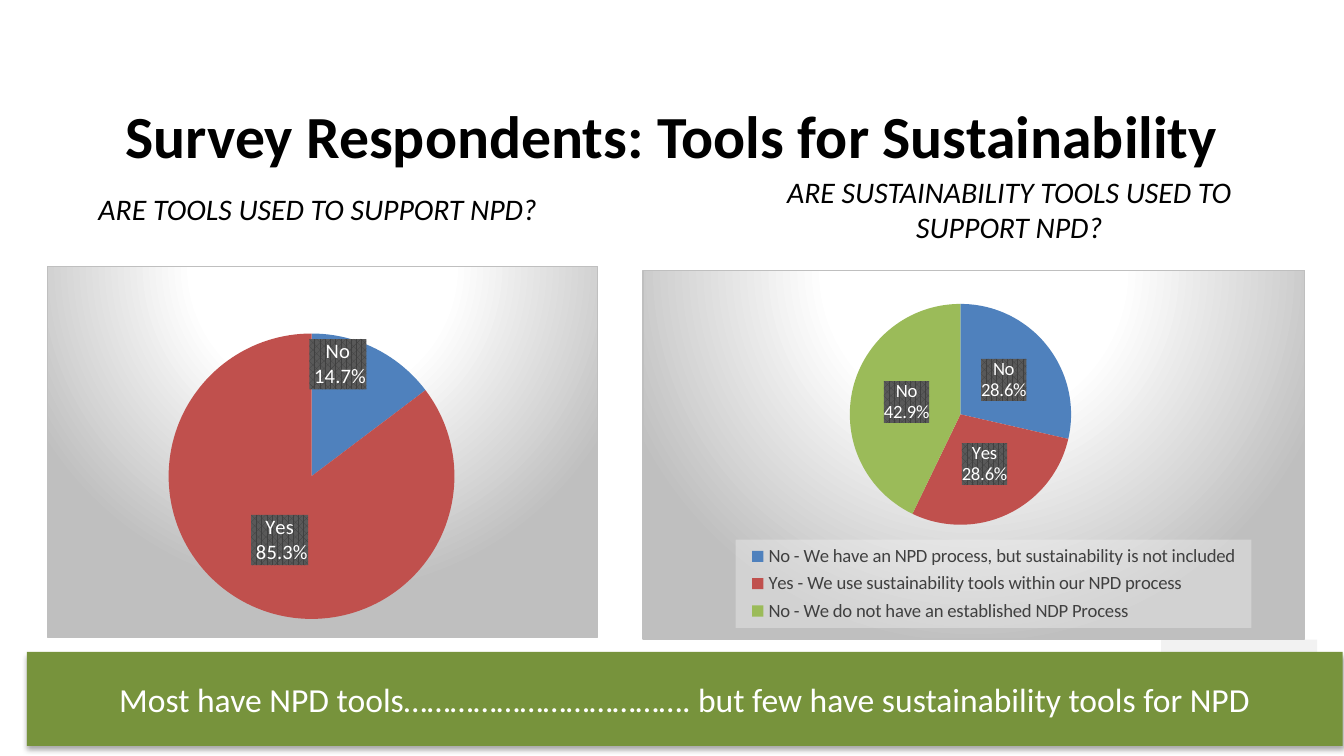
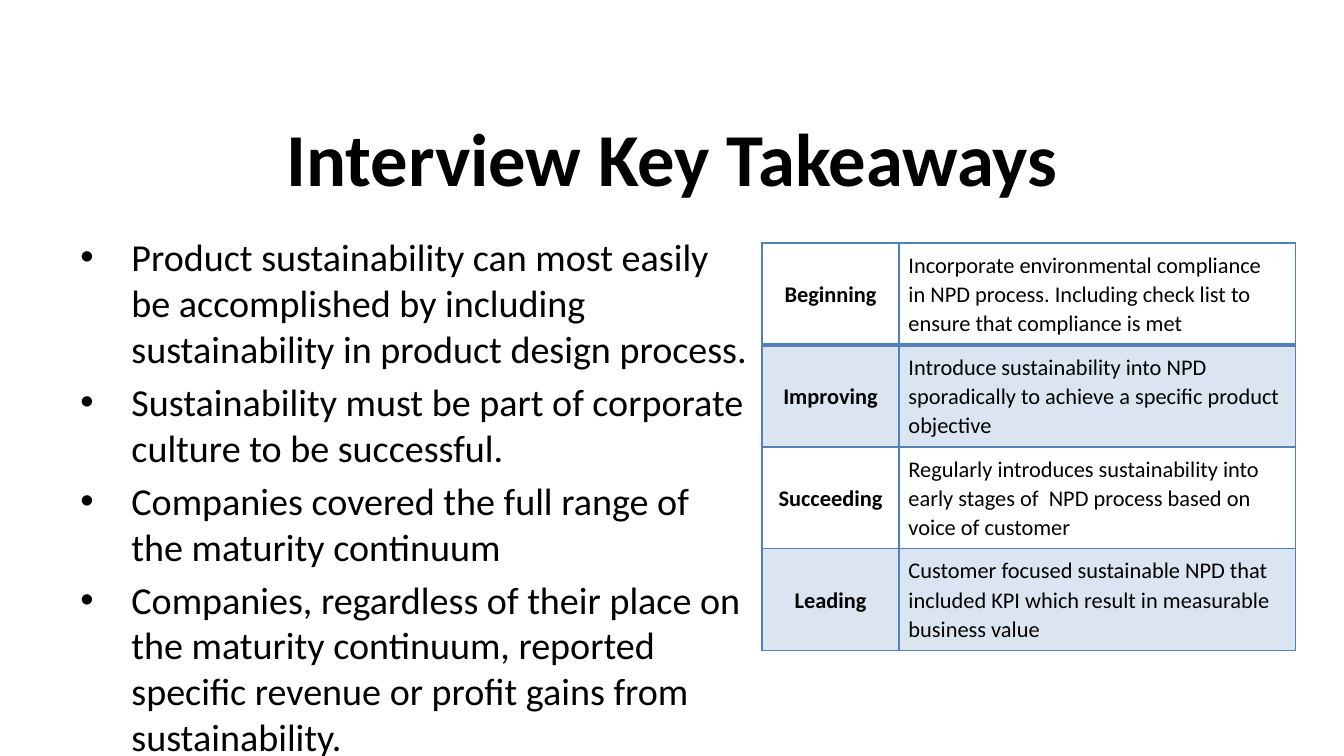
import dataclasses

import pptx
import pptx.chart.data
import pptx.dml.color
import pptx.enum.chart
import pptx.enum.shapes
import pptx.enum.text
import pptx.oxml
import pptx.oxml.ns
import pptx.util

Inches = pptx.util.Inches
ALIGN = pptx.enum.text.PP_ALIGN
MIDDLE = pptx.enum.text.MSO_ANCHOR.MIDDLE
NBSP = chr(160)


@dataclasses.dataclass(frozen=True)
class Theme:
    """Colours and type sizes shared by the slides."""
    font: str = "Calibri"
    text: str = "000000"
    white: str = "FFFFFF"
    pale: str = "F2F2F2"
    grey: str = "BFBFBF"
    legend: str = "404040"
    label: str = "595959"
    banner: str = "77933C"
    accent: str = "4F81BD"
    slices: tuple = ("4F81BD", "C0504D", "9BBB59")
    title_size: float = 40
    long_title_size: float = 32
    heading_size: float = 16
    banner_size: float = 18
    bullet_size: float = 20.4
    cell_size: float = 12
    chart_size: float = 10
    label_size: float = 11


T = Theme()


def rgb(value):
    """Return a colour from its hex value."""
    return pptx.dml.color.RGBColor.from_string(value)


def xml(text, *prefixes):
    """Return an element with its namespaces declared on the root tag."""
    tag, rest = text.split(">", 1)
    close = "/" if tag.endswith("/") else ""
    names = pptx.oxml.ns.nsdecls(*(prefixes or ("a",)))
    return pptx.oxml.parse_xml(f"{tag.rstrip('/')} {names}{close}>{rest}")


def style_font(font, size, color=T.text, **extra):
    """Apply the theme typeface with a size, a colour and further values."""
    values = {"name": T.font, "size": pptx.util.Pt(size), **extra}
    for name, value in values.items():
        setattr(font, name, value)
    font.color.rgb = rgb(color)


def write(tf, lines, size, color=T.text, align=ALIGN.CENTER, **extra):
    """Write one formatted paragraph per line."""
    tf.word_wrap = True
    for i, line in enumerate(lines):
        p = tf.paragraphs[0] if i == 0 else tf.add_paragraph()
        r = p.add_run()
        r.text = line
        p.alignment = align
        style_font(r.font, size, color, **extra)
    return tf


def add_title_slide(prs, title, size, bottom=0.05):
    """Add a title-only slide with the shared title style."""
    s = prs.slides.add_slide(prs.slide_layouts[5])
    sp = s.shapes.title
    place = {"left": 0.5, "top": 0.83, "width": 9, "height": 0.67}
    for name, value in place.items():
        setattr(sp, name, Inches(value))
    tf = write(sp.text_frame, [title], size, bold=True)
    settings = {"vertical_anchor": MIDDLE, "margin_bottom": Inches(bottom),
                "margin_top": Inches(0.05),
                "auto_size": pptx.enum.text.MSO_AUTO_SIZE.NONE}
    for name, value in settings.items():
        setattr(tf, name, value)
    return s


def add_text(s, box, lines, size, **extra):
    """Add a wrapped text box."""
    sp = s.shapes.add_textbox(*map(Inches, box))
    return write(sp.text_frame, lines, size, **extra)


def add_rect(s, box, color):
    """Add a plain filled rectangle."""
    sp = s.shapes.add_shape(pptx.enum.shapes.MSO_SHAPE.RECTANGLE,
                            *map(Inches, box))
    sp.shadow.inherit = False
    sp.fill.solid()
    sp.fill.fore_color.rgb = rgb(color)
    sp.line.fill.background()
    return sp


def add_banner(s, box, text):
    """Add the shadowed message band."""
    sp = add_rect(s, box, T.banner)
    effects = sp.element.spPr.find(pptx.oxml.ns.qn("a:effectLst"))
    effects.append(xml(
        f'<a:outerShdw blurRad="{pptx.util.Pt(3.1)}" '
        f'dist="{pptx.util.Pt(1.8)}" dir="5400000" rotWithShape="0">'
        f'<a:srgbClr val="{T.text}"><a:alpha val="35000"/></a:srgbClr>'
        '</a:outerShdw>'))
    write(sp.text_frame, [text], T.banner_size, T.white)
    sp.text_frame.vertical_anchor = MIDDLE


def manual_layout(x, y, w=None, h=None, inner=False):
    """Return a chart layout, as an offset when no size is given."""
    parts = '<c:layoutTarget val="inner"/>' if inner else ""
    if w:
        parts += '<c:xMode val="edge"/><c:yMode val="edge"/>'
    for name, value in zip("xywh", (x, y, w, h)):
        if value is not None:
            parts += f'<c:{name} val="{value}"/>'
    return xml(f"<c:layout><c:manualLayout>{parts}</c:manualLayout>"
               "</c:layout>", "c")


def set_layout(parent, layout, position):
    """Put a layout in its place, replacing an earlier one."""
    for old in parent.xpath("./c:layout"):
        parent.remove(old)
    parent.insert(position, layout)


def paint_chart(chart):
    """Give a chart area its radial gradient and grey border."""
    stops = "".join(
        f'<a:gs pos="{pos}000"><a:srgbClr val="{color}"/></a:gs>'
        for pos, color in ((0, T.white), (39, T.white), (100, T.grey)))
    chart.element.xpath("./c:chart")[0].addnext(xml(
        f'<c:spPr><a:gradFill><a:gsLst>{stops}</a:gsLst>'
        '<a:path path="circle"><a:fillToRect l="50000" t="-80000" '
        'r="50000" b="180000"/></a:path></a:gradFill>'
        f'<a:ln w="{pptx.util.Pt(0.75)}"><a:solidFill>'
        f'<a:srgbClr val="{T.grey}"/></a:solidFill></a:ln></c:spPr>',
        "c", "a"))


def label_slices(chart, texts, size, category, shifts):
    """Colour the slices and give each its dark patterned label."""
    center = pptx.enum.chart.XL_LABEL_POSITION.CENTER
    series = chart.plots[0].series[0]
    labels = series.data_labels
    settings = {"show_value": True, "show_percentage": True,
                "show_category_name": category, "number_format": "0.0%",
                "number_format_is_linked": False, "position": center}
    for name, value in settings.items():
        setattr(labels, name, value)
    style_font(labels.font, size, T.white, bold=True)
    for i, text in enumerate(texts):
        point = series.points[i]
        point.format.fill.solid()
        point.format.fill.fore_color.rgb = rgb(T.slices[i])
        write(point.data_label.text_frame, text.split("\n"), size, T.white,
              bold=False)
        point.data_label.position = center
    for i, label in enumerate(chart.element.xpath(".//c:dLbl")):
        label.xpath("./c:tx")[0].addnext(xml(
            '<c:spPr><a:pattFill prst="pct75"><a:fgClr>'
            f'<a:srgbClr val="{T.legend}"/></a:fgClr><a:bgClr>'
            f'<a:srgbClr val="{T.label}"/></a:bgClr></a:pattFill></c:spPr>',
            "c", "a"))
        if i in shifts:
            set_layout(label, manual_layout(*shifts[i]), 1)


def add_pie(s, box, data, texts, plot, size, category=False, shifts=None):
    """Add a pie chart with labelled slices."""
    cd = pptx.chart.data.CategoryChartData(number_format="0.0%")
    cd.categories = list(data)
    cd.add_series("Series 1", list(data.values()))
    chart = s.shapes.add_chart(pptx.enum.chart.XL_CHART_TYPE.PIE,
                               *map(Inches, box), cd).chart
    chart.has_title = False
    chart.has_legend = False
    chart.plots[0].vary_by_categories = True
    style_font(chart.font, T.chart_size)
    paint_chart(chart)
    label_slices(chart, texts, size, category, shifts or {})
    area = chart.element.xpath(".//c:plotArea")[0]
    set_layout(area, manual_layout(*plot, inner=True), 0)
    return chart


def add_legend(chart, place):
    """Add a translucent legend at a fixed place."""
    chart.has_legend = True
    legend = chart.legend
    legend.position = pptx.enum.chart.XL_LEGEND_POSITION.RIGHT
    legend.include_in_layout = False
    style_font(legend.font, T.chart_size, T.legend)
    element = chart.element.xpath(".//c:legend")[0]
    set_layout(element, manual_layout(*place), 1)
    element.xpath("./c:txPr")[0].addprevious(xml(
        f'<c:spPr><a:solidFill><a:srgbClr val="{T.pale}">'
        '<a:alpha val="39000"/></a:srgbClr></a:solidFill></c:spPr>',
        "c", "a"))


def add_bullets(s, box, lines):
    """Add a bulleted list with hanging indents."""
    tf = add_text(s, box, lines, T.bullet_size, align=ALIGN.LEFT)
    for i, p in enumerate(tf.paragraphs):
        pPr = p._p.get_or_add_pPr()
        pPr.set("marL", str(Inches(0.38)))
        pPr.set("indent", str(-Inches(0.38)))
        pPr.append(xml('<a:buFont typeface="Arial"/>'))
        pPr.append(xml('<a:buChar char="•"/>'))
        p.space_before = pptx.util.Pt(4 if i else 0)


def format_cell(cell, text, row, heading):
    """Fill, border and write one table cell."""
    write(cell.text_frame, [text], T.cell_size, bold=heading,
          align=ALIGN.CENTER if heading else ALIGN.LEFT)
    cell.text_frame.paragraphs[0].line_spacing = 1.07
    settings = {"vertical_anchor": MIDDLE, "margin_left": Inches(0.07),
                "margin_right": Inches(0.07), "margin_top": 0,
                "margin_bottom": 0}
    for name, value in settings.items():
        setattr(cell, name, value)
    tcPr = cell._tc.get_or_add_tcPr()
    if row % 2:
        cell.fill.solid()
        cell.fill.fore_color.rgb = rgb(T.accent)
        tcPr.xpath("./a:solidFill/a:srgbClr")[0].append(
            xml('<a:alpha val="20000"/>'))
    else:
        cell.fill.background()
    for i, side in enumerate("LRTB"):
        width = 2 if (row, side) in ((0, "B"), (1, "T")) else 1
        tcPr.insert(i, xml(
            f'<a:ln{side} w="{pptx.util.Pt(width)}"><a:solidFill>'
            f'<a:srgbClr val="{T.accent}"/></a:solidFill></a:ln{side}>'))


def add_stages(s, box, widths, rows):
    """Add the table of maturity stages."""
    table = s.shapes.add_table(len(rows), len(widths),
                               *map(Inches, box)).table
    table.first_row = False
    table.horz_banding = False
    for column, width in zip(table.columns, widths):
        column.width = Inches(width)
    for i, texts in enumerate(rows):
        for j, text in enumerate(texts):
            format_cell(table.cell(i, j), text, i, j == 0)


def build_survey(prs):
    """Build the slide with the survey charts."""
    s = add_title_slide(prs, "Survey Respondents: Tools for Sustainability",
                        T.long_title_size, bottom=0.37)
    add_rect(s, (8.64, 4.76, 1.16, 0.4), T.pale)
    add_text(s, (0.2, 1.37, 4.33, 0.37), ["ARE TOOLS USED TO SUPPORT NPD?"],
             T.heading_size, italic=True)
    add_text(s, (5.39, 1.24, 4.24, 0.64),
             ["ARE SUSTAINABILITY TOOLS USED TO", "SUPPORT NPD?"],
             T.heading_size, italic=True)
    add_pie(s, (0.35, 1.98, 4.1, 2.77), {"No": 0.147, "Yes": 0.853},
            ["No\n 14.7%", "Yes\n 85.3%"], (0.22, 0.18, 0.52, 0.77),
            T.label_size, category=True, shifts={0: (-0.01, -0.13)})
    add_banner(s, (0.2, 4.85, 9.79, 0.7),
               "Most have NPD tools………………………………. "
               "but few have sustainability tools for NPD")
    chart = add_pie(s, (4.78, 2.01, 4.93, 2.75), {
        "No - We have an NPD process, but sustainability is not included":
            0.286,
        "Yes - We use sustainability tools within our NPD process": 0.286,
        "No - We do not have an established NDP Process": 0.429,
    }, ["No\n28.6%", "Yes\n28.6%", "No\n42.9%"], (0.05, 0.09, 0.86, 0.6),
        T.chart_size)
    add_legend(chart, (0.14, 0.73, 0.78, 0.24))


def build_takeaways(prs):
    """Build the slide with the interview findings."""
    s = add_title_slide(prs, "Interview Key Takeaways", T.title_size)
    add_bullets(s, (0.5, 1.69, 5.17, 3.34), [
        "Product sustainability can most easily be accomplished by including "
        "sustainability in product design process.",
        "Sustainability must be part of corporate culture to be successful.",
        "Companies covered the full range of the maturity continuum",
        "Companies, regardless of their place on the maturity continuum, "
        "reported specific revenue or profit gains from sustainability."])
    add_stages(s, (5.67, 1.81, 3.97, 3.03), (1.02, 2.95), [
        ("Beginning", f"Incorporate environmental compliance in{NBSP}NPD "
         "process. Including check list to ensure that compliance is met"),
        ("Improving", "Introduce sustainability into NPD sporadically to "
         "achieve a specific product objective"),
        ("Succeeding", "Regularly introduces sustainability into early "
         f"stages of{NBSP} NPD process based on voice of customer"),
        ("Leading", "Customer focused sustainable NPD that included KPI "
         "which result in measurable business value")])


def main():
    """Build and save the slides."""
    prs = pptx.Presentation()
    prs.slide_width = Inches(10)
    prs.slide_height = prs.slide_width * 9 // 16
    build_survey(prs)
    build_takeaways(prs)
    prs.save("out.pptx")


if __name__ == "__main__":
    main()
